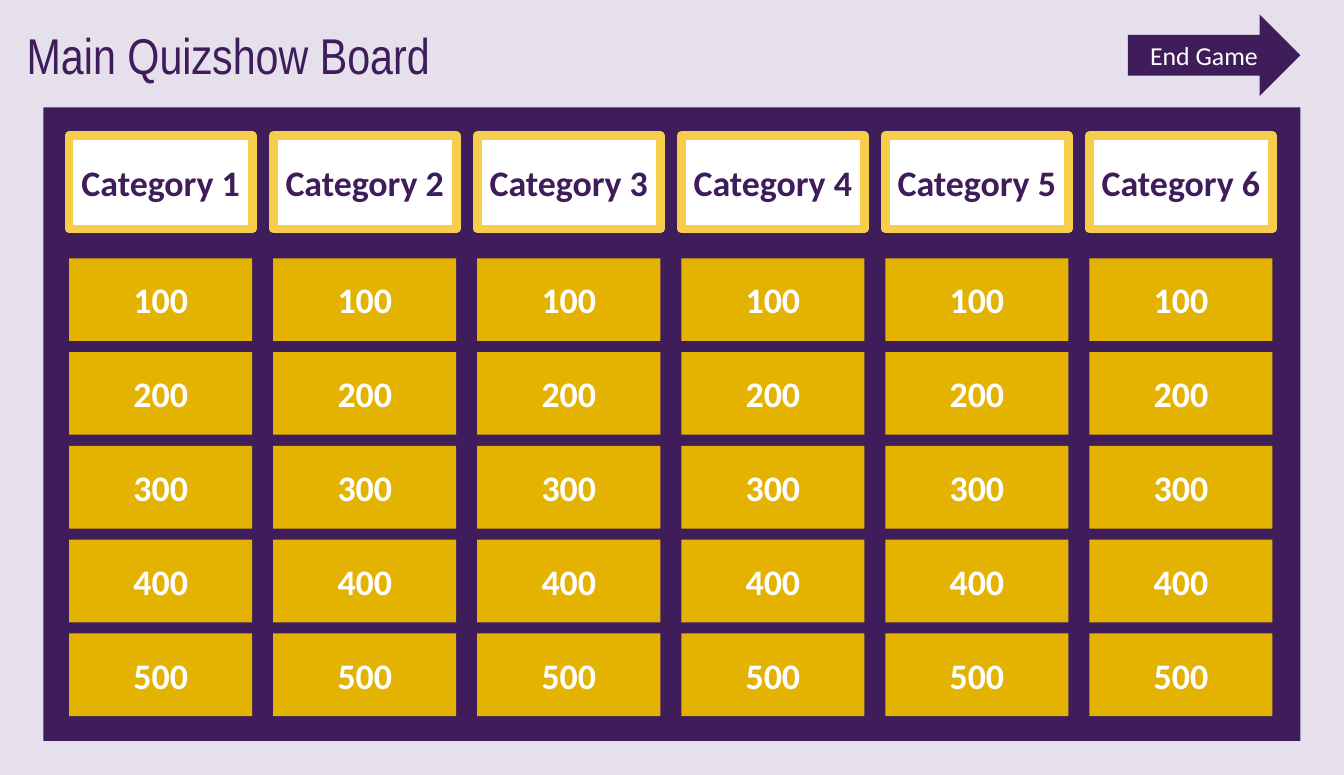
from pptx import Presentation
from pptx.dml.color import RGBColor
from pptx.enum.shapes import MSO_SHAPE
from pptx.enum.text import MSO_ANCHOR, PP_ALIGN
from pptx.util import Pt

RECT, ARROW = MSO_SHAPE.RECTANGLE, MSO_SHAPE.RIGHT_ARROW
LEFT, CENTER = PP_ALIGN.LEFT, PP_ALIGN.CENTER
TOP, MIDDLE = MSO_ANCHOR.TOP, MSO_ANCHOR.MIDDLE

LAVENDER = RGBColor(0xE6, 0xE0, 0xEC)
PURPLE = RGBColor(0x3F, 0x1D, 0x5A)
GOLD = RGBColor(0xE4, 0xB2, 0x00)
YELLOW = RGBColor(0xF7, 0xCE, 0x4C)
WHITE = RGBColor(0xFF, 0xFF, 0xFF)

# Board grid, in points
COLUMNS = 6
VALUES = (100, 200, 300, 400, 500)
GRID_LEFT, COLUMN_PITCH, TILE_W = 48.2, 142.1, 127.5
HEADER_TOP, HEADER_H = 94.5, 65
GRID_TOP, ROW_PITCH, TILE_H = 180, 65.35, 57.6


def write(tf, text, size=25, color=WHITE, font="Calibri", bold=False,
          align=CENTER, anchor=MIDDLE):
    tf.word_wrap = True
    tf.vertical_anchor = anchor
    p = tf.paragraphs[0]
    p.alignment = align
    r = p.add_run()
    r.text = text
    r.font.size = Pt(size)
    r.font.name = font
    r.font.bold = bold
    r.font.color.rgb = color


class Board:
    def __init__(self, slide):
        self.s = slide
        fill = slide.background.fill
        fill.solid()
        fill.fore_color.rgb = LAVENDER

    def title(self, text, x, y, w, h):
        sp = self.s.shapes.add_textbox(Pt(x), Pt(y), Pt(w), Pt(h))
        write(sp.text_frame, text, size=35, color=PURPLE,
              font="Arial Narrow", align=LEFT, anchor=TOP)

    def shape(self, kind, x, y, w, h, fill, line=None, text=None, **style):
        sp = self.s.shapes.add_shape(kind, Pt(x), Pt(y), Pt(w), Pt(h))
        sp.shadow.inherit = False
        sp.fill.solid()
        sp.fill.fore_color.rgb = fill
        if line is None:
            sp.line.fill.background()
        else:
            sp.line.color.rgb = line
            sp.line.width = Pt(6)
        if text is not None:
            tf = sp.text_frame
            tf.margin_left = tf.margin_right = 0
            write(tf, text, **style)

    def category(self, text, x):
        self.shape(RECT, x, HEADER_TOP, TILE_W, HEADER_H, WHITE, line=YELLOW,
                   text=text, color=PURPLE, bold=True)

    def tile(self, value, x, y):
        self.shape(RECT, x, y, TILE_W, TILE_H, GOLD, text=str(value), bold=True)


def main():
    prs = Presentation()
    prs.slide_width, prs.slide_height = Pt(936), Pt(540)
    board = Board(prs.slides.add_slide(prs.slide_layouts[6]))

    # Title, panel and exit arrow
    board.title("Main Quizshow Board", 11.5, 13, 316.8, 49.7)
    board.shape(RECT, 30.25, 74.9, 875.5, 441.4, PURPLE)
    board.shape(ARROW, 785.5, 10.1, 120.2, 56.9, PURPLE,
                text="End Game", size=18)

    # Category headers, each above its column of values
    for col in range(COLUMNS):
        x = GRID_LEFT + col * COLUMN_PITCH
        board.category(f"Category {col + 1}", x)
        for row, value in enumerate(VALUES):
            board.tile(value, x, GRID_TOP + row * ROW_PITCH)

    prs.save("out.pptx")


if __name__ == "__main__":
    main()
